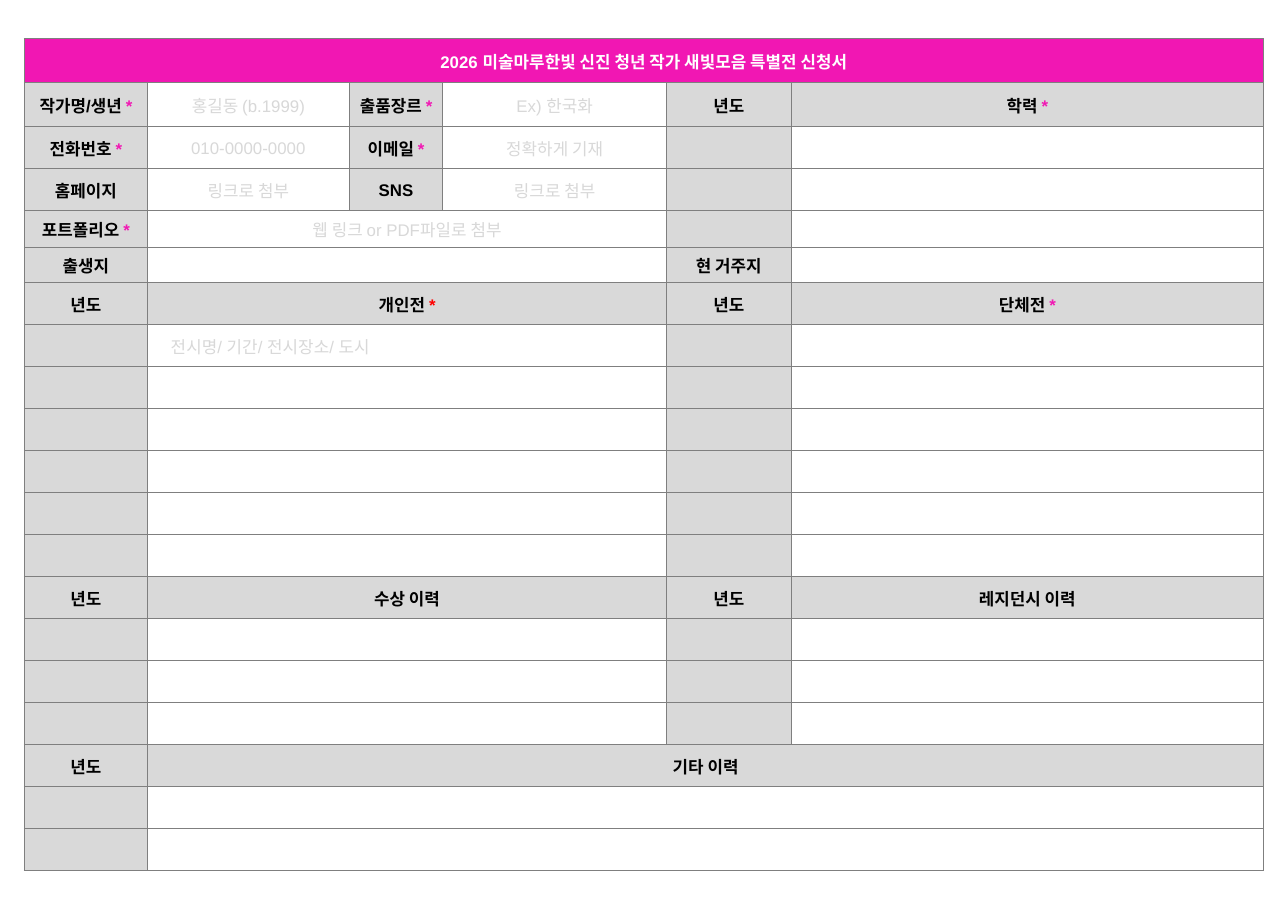
import pptx
import pptx.dml.color
import pptx.enum.text
import pptx.util
from lxml import etree
from pptx.oxml.ns import qn

Inches = pptx.util.Inches
MAGENTA, RED, BLACK, WHITE = "F117B3", "FF0000", "000000", "FFFFFF"
LABEL_GRAY, HINT_GRAY, BORDER_GRAY = "D9D9D9", "D8D8D8", "7F7F7F"
FONT_SIZE = 11

TITLE = "2026 미술마루한빛 신진 청년 작가 새빛모음 특별전 신청서"
EXHIBITION_HINT = "전시명/ 기간/ 전시장소/ 도시"
HEADINGS = ("학력 *", "개인전 *", "단체전 *", "수상 이력", "레지던시 이력", "기타 이력")
LABEL_COLUMNS = (0, 2, 4)

HALVES = ("", "", None, None, "", "")
FULL = ("", "", None, None, None, None)
ROWS = [
    (TITLE, None, None, None, None, None),
    ("작가명/생년 *", "홍길동 (b.1999)", "출품장르 *", "Ex) 한국화", "년도", "학력 *"),
    ("전화번호 *", "010-0000-0000", "이메일 *", "정확하게 기재", "", ""),
    ("홈페이지", "링크로 첨부", "SNS", "링크로 첨부", "", ""),
    ("포트폴리오 *", "웹 링크 or PDF파일로 첨부", None, None, "", ""),
    ("출생지", "", None, None, "현 거주지", ""),
    ("년도", "개인전 *", None, None, "년도", "단체전 *"),
    ("", EXHIBITION_HINT, None, None, "", ""),
    *[HALVES] * 5,
    ("년도", "수상 이력", None, None, "년도", "레지던시 이력"),
    *[HALVES] * 3,
    ("년도", "기타 이력", None, None, None, None),
    *[FULL] * 2,
]

LEFT, TOP, WIDTH, HEIGHT = 0.22, 0.35, 11.25, 7.56
COLUMN_WIDTHS = (1.12, 1.83, 0.85, 2.03, 1.13, 4.29)
SPECIAL_HEIGHTS = {0: 0.4, 1: 0.4, 4: 0.33, 5: 0.32}
REGULAR_HEIGHT = (HEIGHT - sum(SPECIAL_HEIGHTS.values())) / (len(ROWS) - len(SPECIAL_HEIGHTS))


def rgb(color):
    return pptx.dml.color.RGBColor.from_string(color)


def add_borders(cell):
    properties = cell._tc.get_or_add_tcPr()
    for side in ("a:lnL", "a:lnR", "a:lnT", "a:lnB"):
        line = etree.SubElement(properties, qn(side), w=str(pptx.util.Pt(0.75)))
        fill = etree.SubElement(line, qn("a:solidFill"))
        etree.SubElement(fill, qn("a:srgbClr"), val=BORDER_GRAY)


def write_text(cell, text, color=BLACK, star_color=MAGENTA, bold=True, indent=None):
    cell.margin_left = cell.margin_right = cell.margin_top = Inches(0.01)
    cell.margin_bottom = 0
    cell.vertical_anchor = pptx.enum.text.MSO_ANCHOR.MIDDLE
    paragraph = cell.text_frame.paragraphs[0]
    if indent:
        paragraph._p.get_or_add_pPr().set("marL", str(Inches(indent)))
        paragraph.alignment = pptx.enum.text.PP_ALIGN.LEFT
    else:
        paragraph.alignment = pptx.enum.text.PP_ALIGN.CENTER
    label, star, _ = text.partition("*")
    for part, part_color in ((label, color), (star, star_color)):
        if part:
            run = paragraph.add_run()
            run.text = part
            run.font.name = "Arial"
            run.font.size = pptx.util.Pt(FONT_SIZE)
            run.font.bold = bold
            run.font.color.rgb = rgb(part_color)
    etree.SubElement(paragraph._p, qn("a:endParaRPr"), sz=str(FONT_SIZE * 100))


def cell_style(text, column):
    if text == TITLE:
        return MAGENTA, {"color": WHITE}
    if column in LABEL_COLUMNS or text in HEADINGS:
        return LABEL_GRAY, {"star_color": RED if text == "개인전 *" else MAGENTA}
    indent = 0.2 if text == EXHIBITION_HINT else None
    return WHITE, {"color": HINT_GRAY, "bold": False, "indent": indent}


def merge_end(row, column):
    while column + 1 < len(row) and row[column + 1] is None:
        column += 1
    return column


def main():
    presentation = pptx.Presentation()
    presentation.slide_width = Inches(11.69)
    presentation.slide_height = Inches(8.27)
    slide = presentation.slides.add_slide(presentation.slide_layouts[6])
    table = slide.shapes.add_table(
        len(ROWS), len(COLUMN_WIDTHS), Inches(LEFT), Inches(TOP), Inches(WIDTH), Inches(HEIGHT)
    ).table
    table.first_row = table.horz_banding = False
    for column, width in zip(table.columns, COLUMN_WIDTHS):
        column.width = Inches(width)
    for row_index, row in enumerate(ROWS):
        table.rows[row_index].height = Inches(SPECIAL_HEIGHTS.get(row_index, REGULAR_HEIGHT))
        for column_index, text in enumerate(row):
            cell = table.cell(row_index, column_index)
            add_borders(cell)
            fill_color, text_format = cell_style(text or "", column_index)
            cell.fill.solid()
            cell.fill.fore_color.rgb = rgb(fill_color)
            write_text(cell, text or "", **text_format)
        for column_index, text in enumerate(row):
            last = merge_end(row, column_index)
            if text is not None and last > column_index:
                table.cell(row_index, column_index).merge(table.cell(row_index, last))
    presentation.save("out.pptx")


if __name__ == "__main__":
    main()
